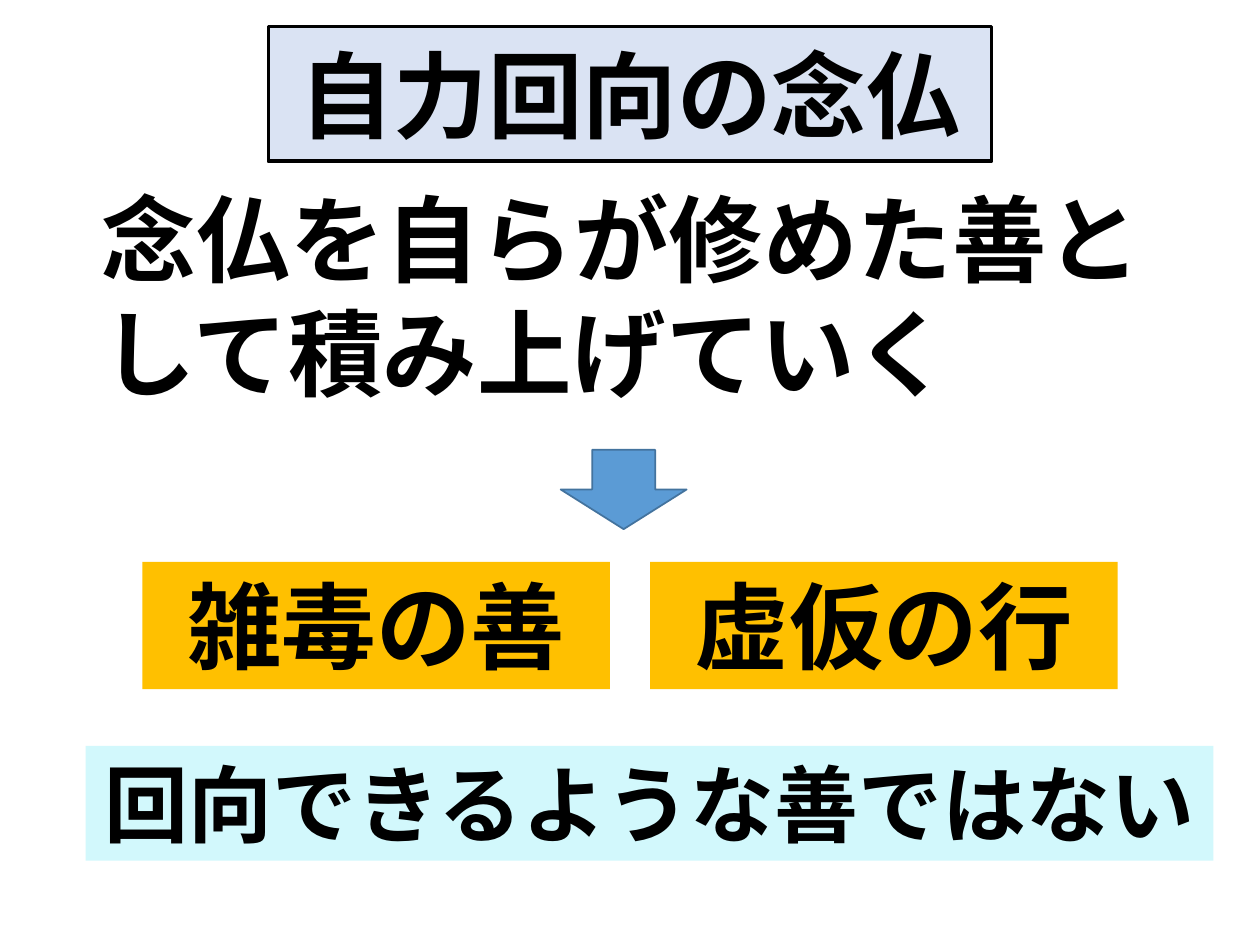
from dataclasses import dataclass

from lxml import etree
from pptx import Presentation
from pptx.dml.color import RGBColor
from pptx.enum.shapes import MSO_SHAPE
from pptx.enum.text import MSO_ANCHOR, MSO_AUTO_SIZE, PP_ALIGN
from pptx.oxml.ns import qn
from pptx.util import Inches, Pt

RECT, DOWN = MSO_SHAPE.RECTANGLE, MSO_SHAPE.DOWN_ARROW
LEFT, CENTER = PP_ALIGN.LEFT, PP_ALIGN.CENTER
TOP, MIDDLE = MSO_ANCHOR.TOP, MSO_ANCHOR.MIDDLE
FIXED = MSO_AUTO_SIZE.NONE


@dataclass(frozen=True)
class Theme:
    font: str = "Noto Sans CJK JP"
    large: int = 54
    small: int = 48
    ink: str = "000000"
    head: str = "DAE3F3"
    gold: str = "FFC000"
    aqua: str = "D2F8FC"
    blue: str = "5B9BD5"
    edge: str = "43739E"


class Page:
    def __init__(self, slide, theme):
        self.slide = slide
        self.theme = theme

    def letter(self, shape, text, size, align=CENTER, anchor=TOP):
        frame = shape.text_frame
        frame.text = text
        frame.word_wrap = True
        frame.auto_size = FIXED
        frame.vertical_anchor = anchor
        para = frame.paragraphs[0]
        para.alignment = align
        for run in para.runs:
            font = run.font
            font.size, font.bold = Pt(size), True
            font.color.rgb = RGBColor.from_string(self.theme.ink)
            font.name = self.theme.font
            # Japanese glyphs take the East Asian typeface
            east = etree.SubElement(font._element, qn("a:ea"))
            east.set("typeface", self.theme.font)

    def paint(self, shape, fill, line=None, width=1):
        shape.fill.solid()
        shape.fill.fore_color.rgb = RGBColor.from_string(fill)
        if line:
            shape.line.color.rgb = RGBColor.from_string(line)
            shape.line.width = Pt(width)
        else:
            shape.line.fill.background()

    def title(self, text, x, y, w, h):
        shape = self.slide.shapes.title
        shape.left, shape.top = Inches(x), Inches(y)
        shape.width, shape.height = Inches(w), Inches(h)
        # Rounded outline for the placeholder
        geom = etree.SubElement(shape._element.spPr, qn("a:prstGeom"))
        geom.set("prst", "roundRect")
        etree.SubElement(geom, qn("a:avLst"))
        self.paint(shape, self.theme.head, self.theme.ink, 2)
        self.letter(shape, text, self.theme.large, anchor=MIDDLE)

    def body(self, text, x, y, w, h):
        box = self.slide.shapes.add_textbox(
            Inches(x), Inches(y), Inches(w), Inches(h))
        self.letter(box, text, self.theme.large, LEFT)

    def shape(self, kind, x, y, w, h, fill, line=None):
        item = self.slide.shapes.add_shape(
            kind, Inches(x), Inches(y), Inches(w), Inches(h))
        item.shadow.inherit = False
        self.paint(item, fill, line)
        return item

    def label(self, text, x, y, w, h, fill, size):
        self.letter(self.shape(RECT, x, y, w, h, fill), text, size)


def main():
    deck = Presentation()
    deck.slide_width, deck.slide_height = Inches(10), Inches(7.5)
    theme = Theme()
    page = Page(deck.slides.add_slide(deck.slide_layouts[5]), theme)

    # Heading and statement
    page.title("自力回向の念仏", 2.13, 0.21, 5.74, 1.07)
    page.body("念仏を自らが修めた善として積み上げていく", 0.71, 1.39, 8.55, 1.92)

    # Arrow to the consequences
    page.shape(DOWN, 4.45, 3.57, 1, 0.63, theme.blue, theme.edge)

    # Pair of gold labels
    wide, gap = 3.71, 0.32
    for i, text in enumerate(("雑毒の善", "虚仮の行")):
        page.label(text, 1.13 + i * (wide + gap), 4.46, wide, 1.01,
                   theme.gold, theme.large)

    # Conclusion
    page.label("回向できるような善ではない", 0.68, 5.92, 8.95, 0.91,
               theme.aqua, theme.small)

    deck.save("out.pptx")


if __name__ == "__main__":
    main()
